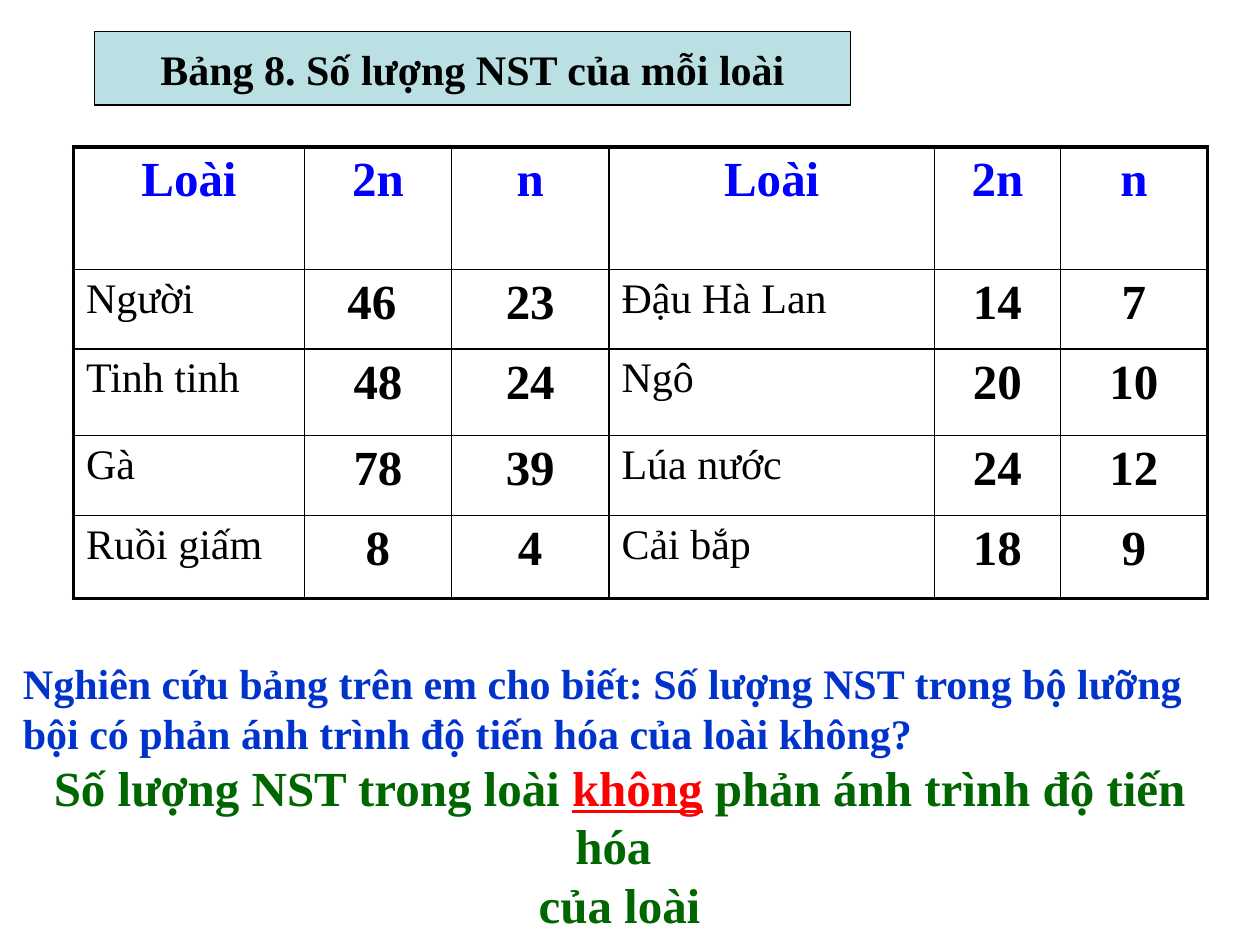
from lxml import etree
from pptx import Presentation
from pptx import util as u
from pptx.dml.color import RGBColor
from pptx.enum import shapes, text
from pptx.oxml import ns

Pt = u.Pt
FONT = "Times New Roman"
COLORS = {"black": "000000", "header": "0000FF", "question": "0033CC",
          "answer": "006600", "stress": "FF0000", "banner": "BBE0E3"}
COLUMNS = [132, 84, 90, 186, 72, 84]
ROWS = [70, 45.5, 49.5, 45.5, 47.5]
SPECIES = [
    ["Loài", "2n", "n", "Loài", "2n", "n"],
    ["Người", "46 ", "23", "Đậu Hà Lan", "14", "7"],
    ["Tinh tinh", "48", "24", "Ngô", "20", "10"],
    ["Gà", "78", "39", "Lúa nước", "24", "12"],
    ["Ruồi giấm", "8", "4", "Cải bắp", "18", "9"],
]
NAME_COLUMNS = (0, 3)


def color(name):
    return RGBColor.from_string(COLORS[name])


def add_span(para, words, size, tint, bold=True, underline=None):
    span = para.add_run()
    span.text = words
    font = span.font
    font.name, font.size, font.bold = FONT, Pt(size), bold
    font.underline = underline
    font.color.rgb = color(tint)


def add_text_box(page, left, top, width, height, wrap):
    box = page.shapes.add_textbox(Pt(left), Pt(top), Pt(width), Pt(height))
    box.text_frame.word_wrap = wrap
    return box.text_frame


def set_borders(cell, widths):
    """Draw the left, right, top and bottom borders, in that order."""
    props = cell._tc.get_or_add_tcPr()
    for index, (side, width) in enumerate(zip("LRTB", widths)):
        line = etree.Element(ns.qn(f"a:ln{side}"), w=str(Pt(width)))
        fill = etree.SubElement(line, ns.qn("a:solidFill"))
        etree.SubElement(fill, ns.qn("a:srgbClr"), val=COLORS["black"])
        props.insert(index, line)


def add_species_table(page):
    last_row, last_col = len(ROWS) - 1, len(COLUMNS) - 1
    table = page.shapes.add_table(
        len(ROWS), len(COLUMNS), Pt(42), Pt(84),
        Pt(sum(COLUMNS)), Pt(sum(ROWS))).table
    table.first_row = table.horz_banding = False
    for column, width in zip(table.columns, COLUMNS):
        column.width = Pt(width)
    for row, height in zip(table.rows, ROWS):
        row.height = Pt(height)
    for r, values in enumerate(SPECIES):
        for c, value in enumerate(values):
            cell = table.cell(r, c)
            cell.fill.background()
            outer = (c == 0, c == last_col, r == 0, r == last_row)
            set_borders(cell, [2.25 if edge else 1 for edge in outer])
            para = cell.text_frame.paragraphs[0]
            is_name = r > 0 and c in NAME_COLUMNS
            para.alignment = (text.PP_ALIGN.LEFT if is_name
                              else text.PP_ALIGN.CENTER)
            add_span(para, value, 24 if is_name else 28,
                     "black" if r else "header", bold=not is_name)


def add_question(page):
    frame = add_text_box(page, 6, 372, 696, 65.5, wrap=True)
    add_span(frame.paragraphs[0],
             "Nghiên cứu bảng trên em cho biết: Số lượng NST trong bộ lưỡng "
             "bội có phản ánh trình độ tiến hóa của loài không?",
             24, "question")


def add_answer(page):
    frame = add_text_box(page, 6, 438, 696, 90, wrap=False)
    frame.vertical_anchor = text.MSO_ANCHOR.MIDDLE
    first, second = frame.paragraphs[0], frame.add_paragraph()
    first.alignment = second.alignment = text.PP_ALIGN.CENTER
    add_span(first, "Số lượng NST trong loài ", 28, "answer")
    add_span(first, "không", 28, "stress", underline=True)
    add_span(first, " phản ánh trình độ tiến hóa ", 28, "answer")
    add_span(second, "của loài", 28, "answer")


def add_banner(page):
    banner = page.shapes.add_shape(shapes.MSO_SHAPE.RECTANGLE,
                                   Pt(54), Pt(18), Pt(432), Pt(42))
    banner.shadow.inherit = False
    banner.fill.solid()
    banner.fill.fore_color.rgb = color("banner")
    banner.line.color.rgb = color("black")
    banner.line.width = Pt(0.75)
    frame = banner.text_frame
    frame.word_wrap = False
    frame.vertical_anchor = text.MSO_ANCHOR.MIDDLE
    para = frame.paragraphs[0]
    para.alignment = text.PP_ALIGN.CENTER
    add_span(para, "Bảng 8. Số lượng NST của mỗi loài", 24, "black")


def main():
    deck = Presentation()
    deck.slide_width, deck.slide_height = Pt(720), Pt(540)
    page = deck.slides.add_slide(deck.slide_layouts[6])
    # Chromosome counts
    add_species_table(page)
    # Question and answer
    add_question(page)
    add_answer(page)
    # Title
    add_banner(page)
    deck.save("out.pptx")


if __name__ == "__main__":
    main()
